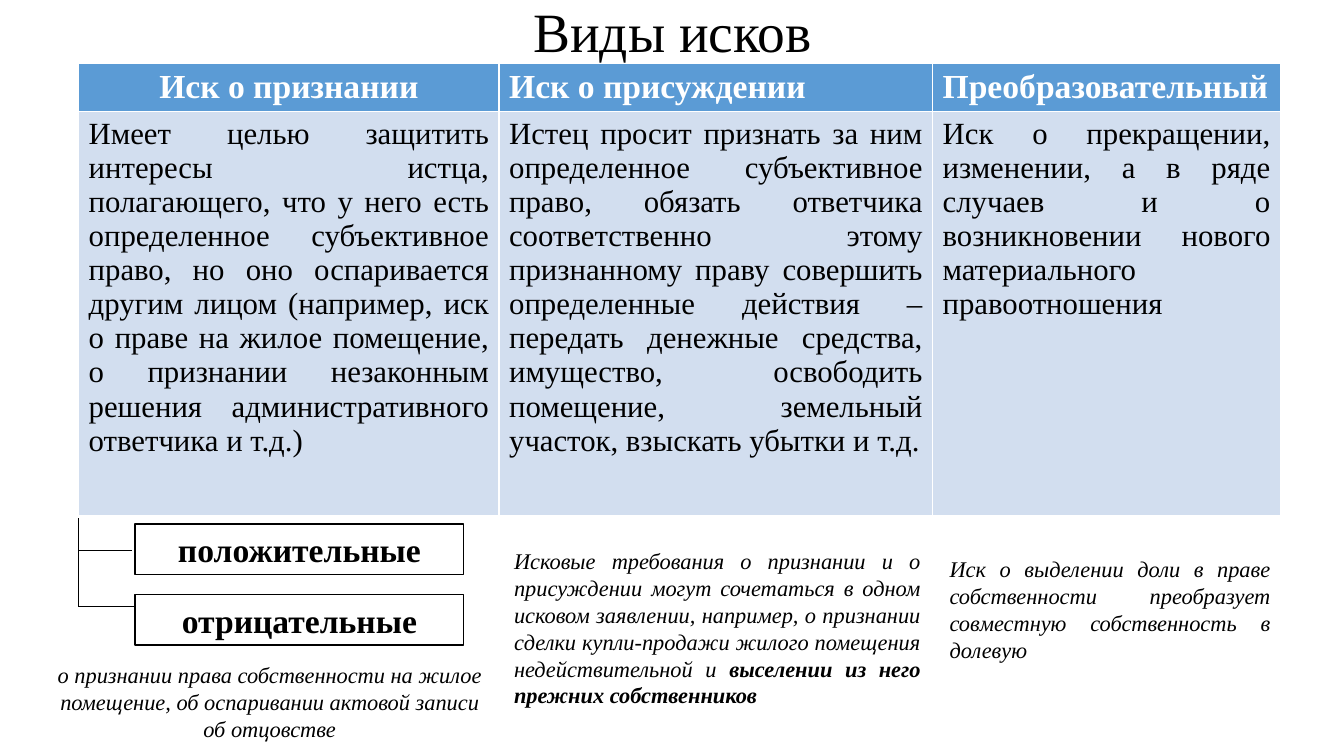
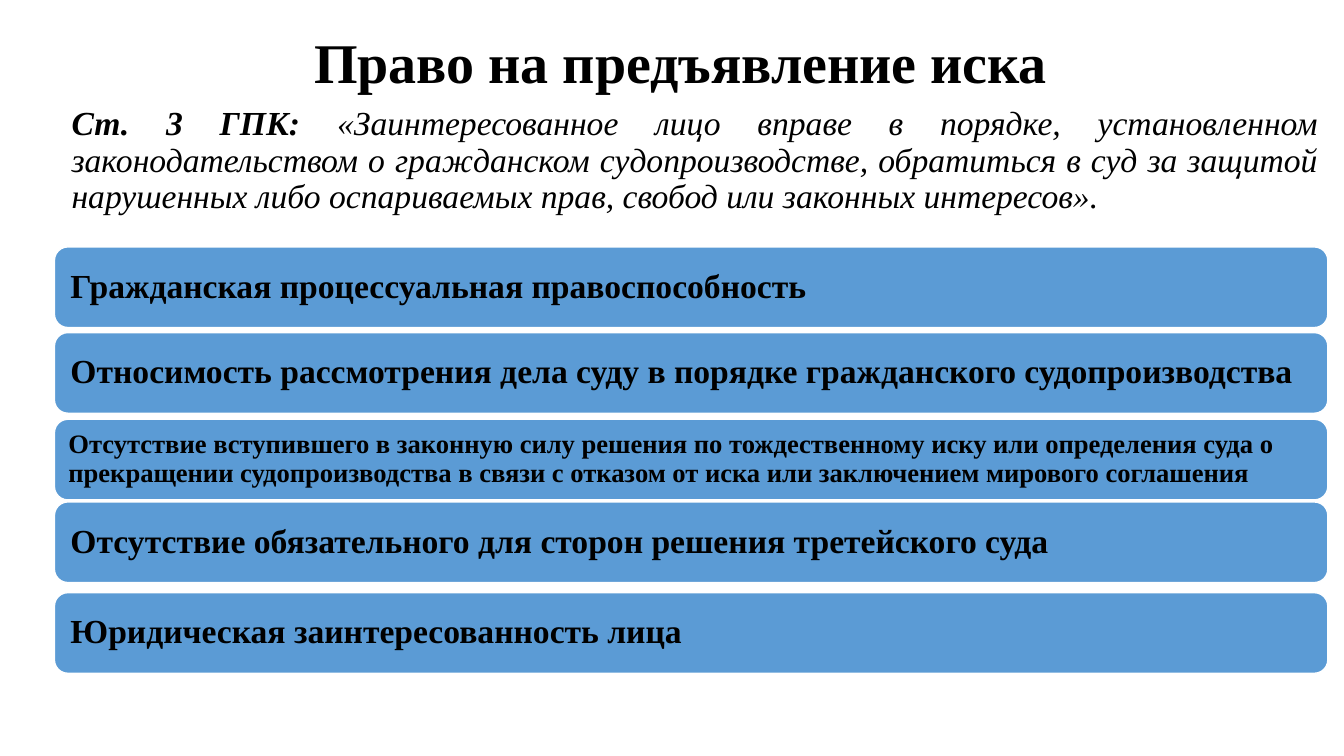
from dataclasses import dataclass, replace

from lxml.etree import SubElement as Sub
from pptx import Presentation
from pptx.dml.color import RGBColor as Rgb
from pptx.enum.shapes import MSO_CONNECTOR as Link, MSO_SHAPE as Kind
from pptx.enum.text import MSO_ANCHOR as Anchor, MSO_AUTO_SIZE as Fit, PP_ALIGN as Align
from pptx.oxml.ns import qn
from pptx.util import Inches, Pt


@dataclass(frozen=True)
class Theme:
    font: str = "Times New Roman"
    black: Rgb = Rgb(0, 0, 0)
    white: Rgb = Rgb(255, 255, 255)
    blue: Rgb = Rgb(0x5B, 0x9B, 0xD5)
    pale: Rgb = Rgb(0xD2, 0xDE, 0xEF)
    title: float = 40
    head: float = 24
    cell: float = 22
    dense: float = 19
    note: float = 16


THEME = Theme()


@dataclass(frozen=True)
class Style:
    size: float
    bold: bool = False
    italic: bool = False
    color: Rgb = THEME.black
    align: Align = Align.LEFT
    lead: float = 1


@dataclass(frozen=True)
class Box:
    left: float
    top: float
    width: float
    height: float

    def place(self) -> tuple:
        return tuple(Inches(n) for n in (self.left, self.top, self.width, self.height))


@dataclass(frozen=True)
class Column:
    width: float
    head: str
    text: str
    align: Align = Align.LEFT


@dataclass(frozen=True)
class Note:
    box: Box
    text: str
    align: Align = Align.JUSTIFY
    strong: str = ""


@dataclass(frozen=True)
class Bar:
    top: float
    text: str
    size: float = THEME.head
    pad: float = 0.14


TITLE = Style(THEME.title, align=Align.CENTER, lead=0.9)
HEAD = Style(THEME.head, bold=True, color=THEME.white)
CELL = Style(THEME.cell, align=Align.JUSTIFY)
LABEL = Style(THEME.head, bold=True, align=Align.CENTER)
NOTE = Style(THEME.note, italic=True)
QUOTE = Style(THEME.head, italic=True, align=Align.JUSTIFY, lead=0.9)
BAR = Style(THEME.head, bold=True, lead=0.9)

COLUMNS = (
    Column(4.17, "Иск о признании", "Имеет целью защитить интересы истца, полагающего, что у него есть определенное субъективное право, но оно оспаривается другим лицом (например, иск о праве на жилое помещение, о признании незаконным решения административного ответчика и т.д.)", Align.CENTER),
    Column(4.3, "Иск о присуждении", "Истец просит признать за ним определенное субъективное право, обязать ответчика соответственно этому признанному праву совершить определенные действия – передать денежные средства, имущество, освободить помещение, земельный участок, взыскать убытки и т.д."),
    Column(3.45, "Преобразовательный", "Иск о прекращении, изменении, а в ряде случаев и о возникновении нового материального правоотношения"),
)
KINDS = ("положительные", "отрицательные")
LINES = ((0.78, 5.14, 0.78, 6.02), (0.78, 5.46, 1.31, 5.46), (0.78, 6.02, 1.34, 6.02))
NOTES = (
    Note(Box(0.38, 6.51, 4.59, 0.91), "о признании права собственности на жилое помещение, об оспаривании актовой записи об отцовстве", Align.CENTER),
    Note(Box(5, 5.38, 4.23, 1.99), "Исковые требования о признании и о присуждении могут сочетаться в одном исковом заявлении, например, о признании сделки купли-продажи жилого помещения недействительной и ", strong="выселении из него прежних собственников"),
    Note(Box(9.32, 5.46, 3.38, 1.18), "Иск о выделении доли в праве собственности преобразует совместную собственность в долевую"),
)
BARS = (
    Bar(2.45, "Гражданская процессуальная правоспособность"),
    Bar(3.3, "Относимость рассмотрения дела суду в порядке гражданского судопроизводства"),
    Bar(4.16, "Отсутствие вступившего в законную силу решения по тождественному иску или определения суда о прекращении судопроизводства в связи с отказом от иска или заключением мирового соглашения", THEME.dense, 0.12),
    Bar(4.98, "Отсутствие обязательного для сторон решения третейского суда"),
    Bar(5.88, "Юридическая заинтересованность лица"),
)


def write(frame, style: Style, *parts: tuple[str, bool]) -> None:
    frame.word_wrap = True
    para = frame.paragraphs[0]
    para.alignment = style.align
    para.line_spacing = style.lead
    para.space_before = Pt(0)
    font = para.font
    font.name, font.size = THEME.font, Pt(style.size)
    font.italic = style.italic
    font.color.rgb = style.color
    if len(parts) == 1:
        font.bold = parts[0][1]
    for text, bold in parts:
        run = para.add_run()
        run.text = text
        if len(parts) > 1:
            run.font.bold = bold


def seat(holder, box: Box) -> None:
    holder.left, holder.top, holder.width, holder.height = box.place()
    holder.text_frame.auto_size = Fit.NONE


def start(deck, layout: int, text: str, box: Box, style: Style):
    slide = deck.slides.add_slide(deck.slide_layouts[layout])
    title = slide.shapes.title
    seat(title, box)
    title.text_frame.vertical_anchor = Anchor.MIDDLE
    write(title.text_frame, style, (text, style.bold))
    return slide


def panel(slide, kind: Kind, box: Box, fill: Rgb, edge: Rgb, text: str, style: Style):
    shape = slide.shapes.add_shape(kind, *box.place())
    shape.shadow.inherit = False
    shape.fill.solid()
    shape.fill.fore_color.rgb = fill
    shape.line.color.rgb = edge
    shape.line.width = Pt(1)
    shape.text_frame.vertical_anchor = Anchor.MIDDLE
    write(shape.text_frame, style, (text, style.bold))
    return shape


def link(slide, ends: tuple) -> None:
    line = slide.shapes.add_connector(Link.STRAIGHT, *(Inches(n) for n in ends))
    line.line.color.rgb = THEME.black
    line.line.width = Pt(0.5)
    Sub(line._element.spPr, qn("a:effectLst"))


def grid(slide) -> None:
    box = Box(0.78, 0.63, sum(c.width for c in COLUMNS), 4.49)
    table = slide.shapes.add_table(2, len(COLUMNS), *box.place()).table
    table.rows[0].height, table.rows[1].height = Inches(0.48), Inches(4.01)
    for at, col in enumerate(COLUMNS):
        table.columns[at].width = Inches(col.width)
        rows = (
            (col.head, replace(HEAD, align=col.align), THEME.blue),
            (col.text, CELL, THEME.pale),
        )
        for row, (text, style, fill) in enumerate(rows):
            cell = table.cell(row, at)
            cell.fill.solid()
            cell.fill.fore_color.rgb = fill
            write(cell.text_frame, style, (text, style.bold))


def claims(deck) -> None:
    style = replace(TITLE, size=39.6)
    slide = start(deck, 5, "Виды исков", Box(0.92, 0.2, 11.5, 0.29), style)
    grid(slide)
    for ends in LINES:
        link(slide, ends)
    for at, text in enumerate(KINDS):
        box = Box(1.34, 5.2 + 0.7 * at, 3.26, 0.5)
        panel(slide, Kind.RECTANGLE, box, THEME.white, THEME.black, text, LABEL)
    for note in NOTES:
        frame = slide.shapes.add_textbox(*note.box.place()).text_frame
        parts = [(note.text, False)]
        if note.strong:
            parts.append((note.strong, True))
        write(frame, replace(NOTE, align=note.align), *parts)


def rights(deck) -> None:
    style = replace(TITLE, bold=True)
    slide = start(deck, 1, "Право на предъявление иска", Box(1, 0.19, 11.5, 0.92), style)
    body = slide.placeholders[1]
    seat(body, Box(0.61, 1.01, 12.56, 1.64))
    props = body.text_frame.paragraphs[0]._p.get_or_add_pPr()
    props.set("marL", "0")
    props.set("indent", "0")
    Sub(props, qn("a:buNone"))
    write(
        body.text_frame, QUOTE, ("Ст. 3 ГПК: ", True),
        ("«Заинтересованное лицо вправе в порядке, установленном законодательством о гражданском судопроизводстве, обратиться в суд за защитой нарушенных либо оспариваемых прав, свобод или законных интересов».", False),
    )
    for bar in BARS:
        box = Box(0.54, bar.top, 12.63, 0.8)
        shape = panel(slide, Kind.ROUNDED_RECTANGLE, box, THEME.blue, THEME.white, bar.text, replace(BAR, size=bar.size))
        frame = shape.text_frame
        # noqa
        frame.margin_left = frame.margin_right = Inches(bar.pad - 0.02)
        frame.margin_top = frame.margin_bottom = Inches(bar.pad - 0.02)


def main() -> None:
    deck = Presentation()
    deck.slide_width, deck.slide_height = Inches(13.33), Inches(7.5)
    claims(deck)
    rights(deck)
    deck.save("out.pptx")


if __name__ == "__main__":
    main()
